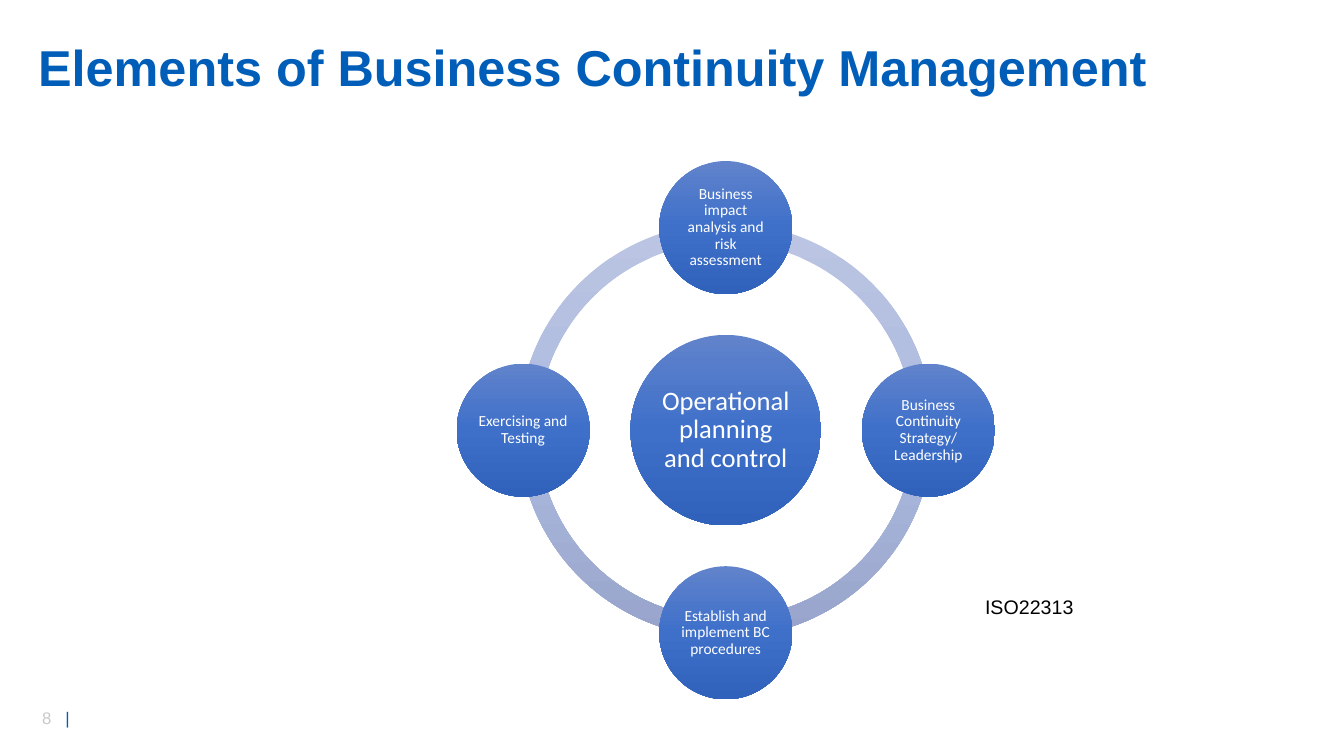
from copy import deepcopy
from math import cos, radians, sin

from lxml import etree
from pptx import Presentation
from pptx.dml.color import RGBColor
from pptx.enum.shapes import MSO_SHAPE
from pptx.enum.text import MSO_ANCHOR, PP_ALIGN
from pptx.oxml.ns import qn
from pptx.util import Inches, Pt

ARC = MSO_SHAPE.BLOCK_ARC
CIRCLE = MSO_SHAPE.OVAL
MIDDLE = MSO_ANCHOR.MIDDLE
TOP = MSO_ANCHOR.TOP
CENTER = PP_ALIGN.CENTER

WIDTH, HEIGHT = 13.33, 7.5
HUB_X, HUB_Y = 0.54 * WIDTH, 0.569 * HEIGHT
ORBIT = 2.01
RING_SIZE, HUB_SIZE, ELEMENT_SIZE = 4.11, 1.89, 1.32
RING_THICKNESS = 0.046
QUARTER = 54

BLUE = "005EB8"
RING_COLORS = ["BBC5E3", "AEBBE0", "98A4CB"]
CIRCLE_COLORS = ["6183CB", "3E70CA", "3062BB"]

ELEMENTS = [
    "Business impact analysis and risk assessment",
    "Business Continuity Strategy/ Leadership",
    "Establish and implement BC procedures",
    "Exercising and Testing",
]


def rgb(value):
    return RGBColor.from_string(value)


def style(font, size, color, name="Arial", bold=False):
    font.name = name
    font.size = Pt(size)
    font.bold = bold
    font.color.rgb = rgb(color)


def set_insets(frame, x, y):
    frame.margin_left = frame.margin_right = Inches(x)
    frame.margin_top = frame.margin_bottom = Inches(y)


def shade(shape, colors):
    shape.fill.gradient()
    shape.fill.gradient_angle = 270
    stop_list = shape._element.spPr.find(".//" + qn("a:gsLst"))
    stop_list.insert(1, deepcopy(stop_list[0]))
    for index, (stop, color) in enumerate(zip(shape.fill.gradient_stops, colors)):
        stop.position = index / (len(colors) - 1)
        stop.color.rgb = rgb(color)


def add_round(slide, kind, x, y, size, colors):
    shape = slide.shapes.add_shape(
        kind, Inches(x - size / 2), Inches(y - size / 2), Inches(size), Inches(size))
    shape.shadow.inherit = False
    shape.line.fill.background()
    shade(shape, colors)
    return shape


def add_ring_quarter(slide, start):
    arc = add_round(slide, ARC, HUB_X, HUB_Y, RING_SIZE, RING_COLORS)
    arc.adjustments[0] = start
    arc.adjustments[1] = (start + QUARTER) % (4 * QUARTER)
    arc.adjustments[2] = RING_THICKNESS


def add_circle(slide, text, x, y, size, font_size, inset):
    frame = add_round(slide, CIRCLE, x, y, size, CIRCLE_COLORS).text_frame
    frame.word_wrap = True
    frame.vertical_anchor = MIDDLE
    set_insets(frame, inset, inset)
    label = frame.paragraphs[0]
    label.text = text
    label.alignment = CENTER
    label.line_spacing = 0.9
    style(label.font, font_size, "FFFFFF", "Calibri")


def add_label(slide, box, anchor=TOP, insets=(0.1, 0.05)):
    frame = slide.shapes.add_textbox(*map(Inches, box)).text_frame
    frame.word_wrap = True
    frame.vertical_anchor = anchor
    set_insets(frame, *insets)
    return frame.paragraphs[0]


def add_page_number(slide):
    footer = add_label(slide, (0.32, 6.97, 0.71, 0.3))
    tabs = etree.SubElement(footer._p.get_or_add_pPr(), qn("a:tabLst"))
    etree.SubElement(tabs, qn("a:tab"), pos=str(Inches(0.23)), algn="l")
    for text, color in (("8\t", "C9C9C9"), ("|", BLUE)):
        run = footer.add_run()
        run.text = text
        style(run.font, 12, color)


def main():
    deck = Presentation()
    deck.slide_width, deck.slide_height = Inches(WIDTH), Inches(HEIGHT)
    slide = deck.slides.add_slide(deck.slide_layouts[6])

    add_page_number(slide)

    title = add_label(slide, (0.28, 0.36, 11.64, 0.67), MIDDLE)
    title.text = "Elements of Business Continuity Management"
    title.line_spacing = 0.9
    style(title.font, 36, BLUE, bold=True)

    for quarter in range(4):
        add_ring_quarter(slide, quarter * QUARTER)
    add_circle(slide, "Operational planning and control", HUB_X, HUB_Y, HUB_SIZE, 19, 0.03)
    for index, element in enumerate(ELEMENTS):
        angle = radians(360 / len(ELEMENTS) * index - 90)
        add_circle(slide, element, HUB_X + ORBIT * cos(angle),
                   HUB_Y + ORBIT * sin(angle), ELEMENT_SIZE, 11, 0.02)

    standard = add_label(slide, (9.77, 5.9, 2.03, 0.24), insets=(0, 0))
    standard.text = "ISO22313"
    style(standard.font, 14, "000000")

    deck.save("out.pptx")


if __name__ == "__main__":
    main()
